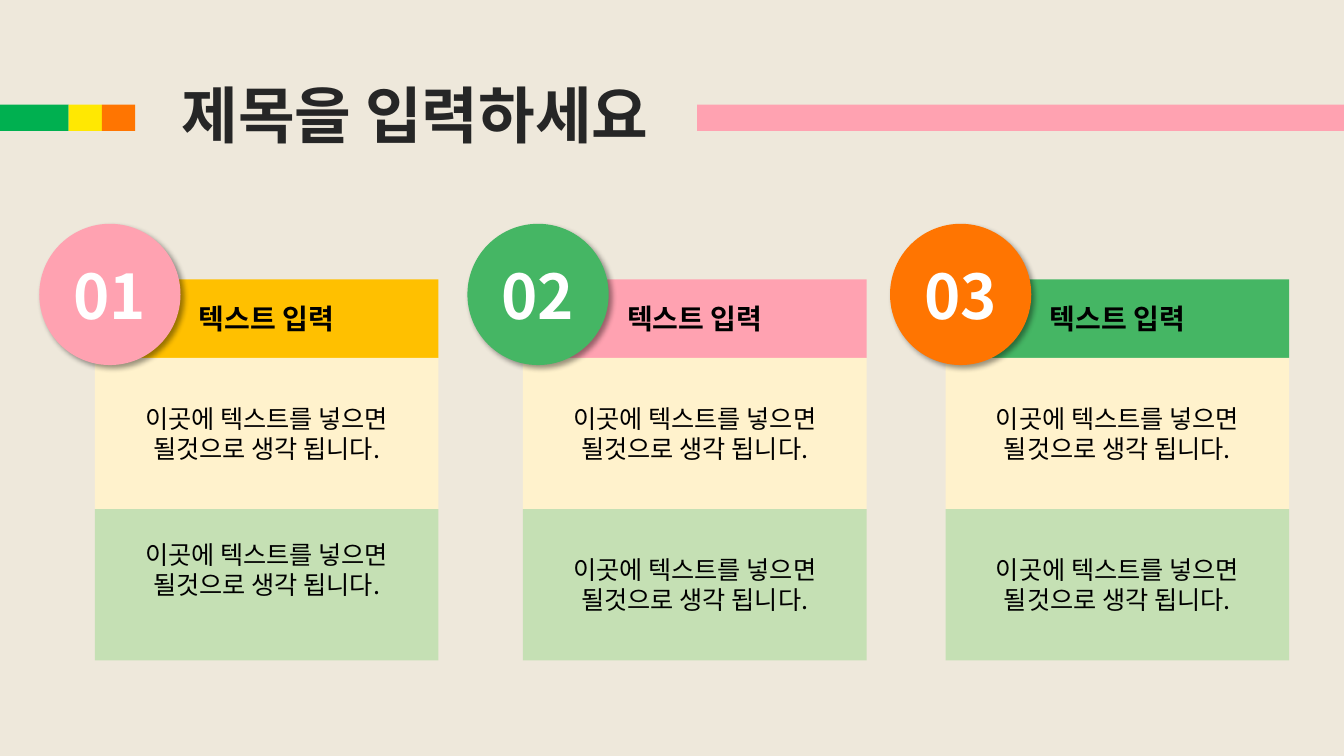
from lxml import etree
from pptx import Presentation
from pptx.dml.color import RGBColor
from pptx.enum import shapes, text
from pptx.oxml import ns
from pptx.util import Cm, Pt

FACE = "Noto Sans CJK KR"
BODY = "이곳에 텍스트를 넣으면 될것으로 생각 됩니다."
RECT = shapes.MSO_SHAPE.RECTANGLE
OVAL = shapes.MSO_SHAPE.OVAL
WIDE, HEAD, CELL, DISC = 8.66, 1.98, 3.81, 3.56
TOP = 7.04
CARDS = [
    ("01", 2.39, "FFC000", "FFA2B1"),
    ("02", 13.18, "FFA2B1", "45B664"),
    ("03", 23.83, "45B664", "FF7501"),
]
STRIPS = [(0, 1.73, "00B050"), (1.73, 0.84, "FFE802"), (2.57, 0.84, "FF7501")]


def paint(fill, code):
    fill.solid()
    fill.fore_color.rgb = RGBColor.from_string(code)


def write(frame, words, size, code, bold):
    """Put one centred paragraph in the frame, with the face set for Hangul too."""
    frame.word_wrap = True
    para = frame.paragraphs[0]
    para.text = words
    para.alignment = text.PP_ALIGN.CENTER
    font = para.font
    font.name, font.size, font.bold = FACE, Pt(size), bold
    paint(font.fill, code)
    props = para._p.pPr.find(ns.qn("a:defRPr"))
    etree.SubElement(props, ns.qn("a:ea"), typeface=FACE)
    return para


def block(group, kind, left, top, width, height, code):
    shape = group.shapes.add_shape(kind, Cm(left), Cm(top), Cm(width), Cm(height))
    shape.shadow.inherit = False
    paint(shape.fill, code)
    shape.line.fill.background()
    return shape


def label(shape, words, size, code="000000", bold=False):
    shape.text_frame.vertical_anchor = text.MSO_ANCHOR.MIDDLE
    write(shape.text_frame, words, size, code, bold)


def shade(shape):
    """Give the shape a soft shadow to the lower right."""
    effects = shape._element.spPr.find(ns.qn("a:effectLst"))
    outer = etree.SubElement(
        effects, ns.qn("a:outerShdw"), blurRad=str(Pt(4)), dist=str(Pt(3)),
        dir=str(45 * 60000), algn="tl", rotWithShape="0")
    tone = etree.SubElement(outer, ns.qn("a:srgbClr"), val="000000")
    etree.SubElement(tone, ns.qn("a:alpha"), val="40000")


def head(slide):
    title = slide.shapes.title
    title.left, title.top = Cm(3.38), Cm(2.31)
    title.width, title.height = Cm(14.17), Cm(1.63)
    frame = title.text_frame
    frame.auto_size = text.MSO_AUTO_SIZE.NONE
    frame.vertical_anchor = text.MSO_ANCHOR.TOP
    frame.margin_top = frame.margin_bottom = 0
    para = write(frame, "제목을 입력하세요", 44, "262626", True)
    para.line_spacing = 0.8
    para.space_before = Pt(0)

    group = slide.shapes.add_group_shape()
    for left, width, code in STRIPS:
        block(group, RECT, left, 2.64, width, 0.66, code)
    block(slide, RECT, 17.57, 2.64, 16.3, 0.66, "FFA2B1")


def card(slide, number, left, band, tint):
    group = slide.shapes.add_group_shape()
    bar = block(group, RECT, left, TOP, WIDE, HEAD, band)
    label(bar, "텍스트 입력", 20, bold=True)
    for row, code in enumerate(["FFF2CC", "C5E0B4"]):
        cell = block(group, RECT, left, TOP + HEAD + row * CELL, WIDE, CELL, code)
        label(cell, BODY, 18)
    disc = block(group, OVAL, left - 1.4, TOP - 1.4, DISC, DISC, tint)
    shade(disc)
    label(disc, number, 44, "FFFFFF", True)
    return cell


def main():
    deck = Presentation()
    deck.slide_width, deck.slide_height = Cm(33.87), Cm(19.05)
    slide = deck.slides.add_slide(deck.slide_layouts[5])
    paint(slide.background.fill, "EEE8DB")
    head(slide)
    cells = [card(slide, *spec) for spec in CARDS]
    # The first card's lower text sits half a line higher.
    cells[0].text_frame.margin_bottom = Cm(0.89)
    deck.save("out.pptx")


if __name__ == "__main__":
    main()
